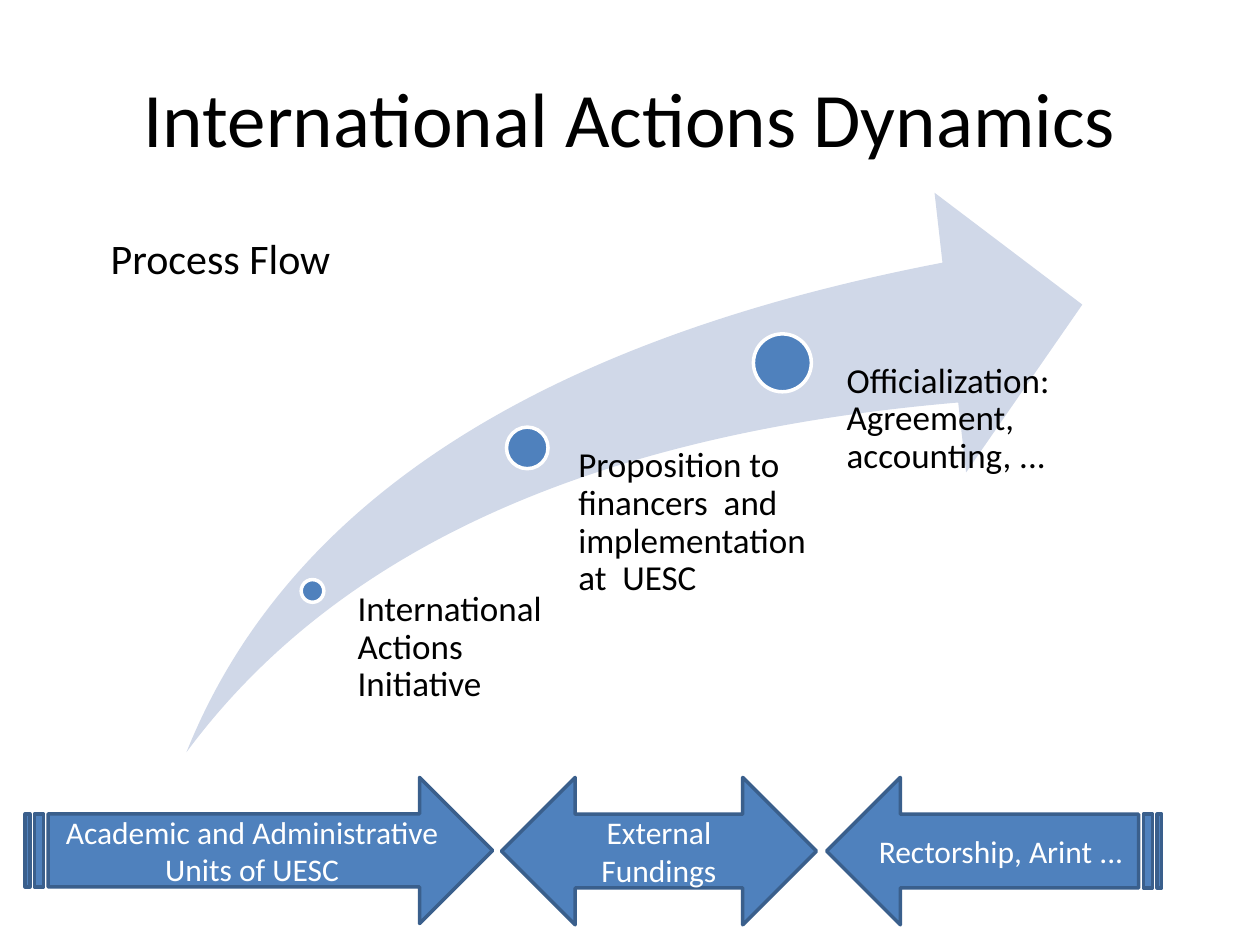
"""Build the International Actions Dynamics slide."""
import pptx
import pptx.dml.color
import pptx.enum.shapes
import pptx.enum.text
import pptx.util

PX = 9144
KIND = pptx.enum.shapes.MSO_SHAPE
ALIGN = pptx.enum.text.PP_ALIGN
ANCHOR = pptx.enum.text.MSO_ANCHOR
HUES = {"black": "000000", "white": "FFFFFF", "blue": "4F81BD",
        "navy": "3A5F8C", "pale": "D0D8E8"}
HUES = {name: pptx.dml.color.RGBColor.from_string(code) for name, code in HUES.items()}


def write(shape, text, size, hue, align, frame):
    body = shape.text_frame
    for name, value in frame.items():
        setattr(body, name, value)
    para = body.paragraphs[0]
    para.text = text
    para.alignment = align
    font = para.runs[0].font
    for name, value in {"name": "Calibri", "size": pptx.util.Pt(size)}.items():
        setattr(font, name, value)
    font.color.rgb = HUES[hue]
    return para


def draw(kind, box, fill, line=None):
    shape = slide.shapes.add_shape(kind, *[n * PX for n in box])
    shape.shadow.inherit = False
    shape.fill.solid()
    shape.fill.fore_color.rgb = HUES[fill]
    if line:
        shape.line.color.rgb = HUES[line]
        shape.line.width = pptx.util.Pt(2)
    else:
        shape.line.fill.background()
    return shape


deck = pptx.Presentation()
for name, value in {"slide_width": 1000 * PX, "slide_height": 750 * PX}.items():
    setattr(deck, name, value)
slide = deck.slides.add_slide(deck.slide_layouts[6])

title = slide.shapes.add_textbox(50 * PX, 30 * PX, 900 * PX, 125 * PX)
write(title, "International Actions Dynamics", 44, "black", ALIGN.CENTER,
      {"word_wrap": True, "vertical_anchor": ANCHOR.MIDDLE})

swoosh = draw(KIND.SWOOSH_ARROW, (148, 153, 711, 444), "pale")
for spot in range(2):
    swoosh.adjustments[spot] = 0.25

base = 597
steps = [
    (239, 460, 18, 274, 469, 166, 10, "International Actions Initiative"),
    (402, 339, 33, 441, 355, 213, 18, "Proposition to financers  and implementation at  UESC"),
    (598, 265, 46, 648, 288, 243, 24, "Officialization: Agreement, accounting, ..."),
]
for x, y, size, left, top, width, inset, text in steps:
    draw(KIND.OVAL, (x, y, size, size), "blue", "white")
    label = slide.shapes.add_textbox(left * PX, top * PX, width * PX, (base - top) * PX)
    para = write(label, text, 20, "black", ALIGN.LEFT,
                 {"word_wrap": True, "margin_left": inset * PX, "margin_top": 0,
                  "margin_right": 0, "margin_bottom": 0})
    para.line_spacing = 0.9

arrows = [
    (KIND.STRIPED_RIGHT_ARROW, 656, 266, 117, True, "Rectorship, Arint ..."),
    (KIND.LEFT_RIGHT_ARROW, 398, 250, 117, False, "External Fundings"),
    (KIND.STRIPED_RIGHT_ARROW, 20, 371, 116, False,
     "Academic and Administrative Units of UESC"),
]
for kind, left, width, height, turned, text in arrows:
    arrow = draw(kind, (left, 617, width, height), "blue", "navy")
    if turned:
        arrow.rotation = 180
        arrow.element.spPr.xfrm.set("flipV", "1")
    write(arrow, text, 18, "white", ALIGN.CENTER,
          {"word_wrap": True, "vertical_anchor": ANCHOR.MIDDLE})

flow = slide.shapes.add_textbox(78 * PX, 180 * PX, 196 * PX, 50 * PX)
write(flow, "Process Flow", 24, "black", ALIGN.LEFT,
      {"word_wrap": False, "auto_size": pptx.enum.text.MSO_AUTO_SIZE.SHAPE_TO_FIT_TEXT})

deck.save("out.pptx")
